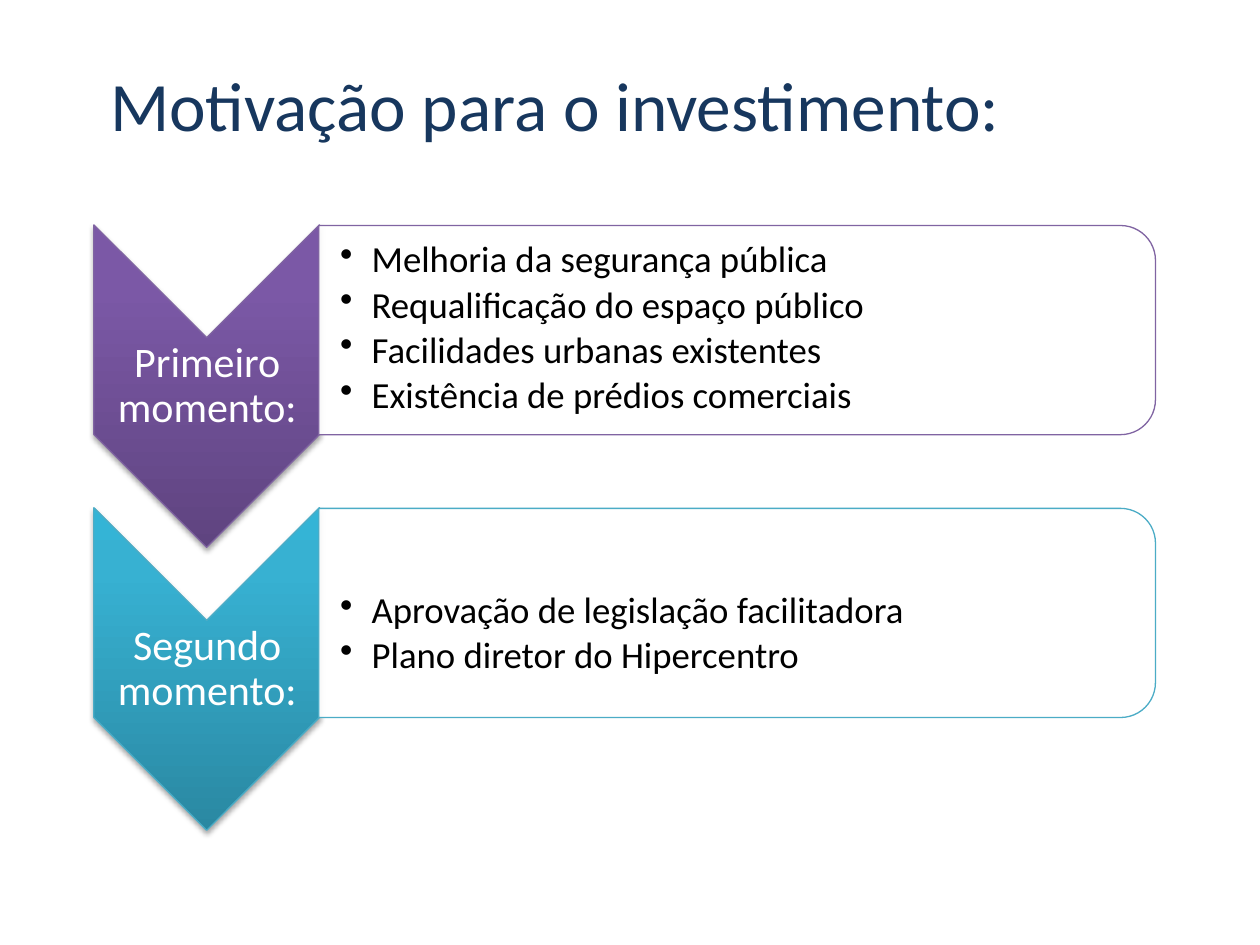
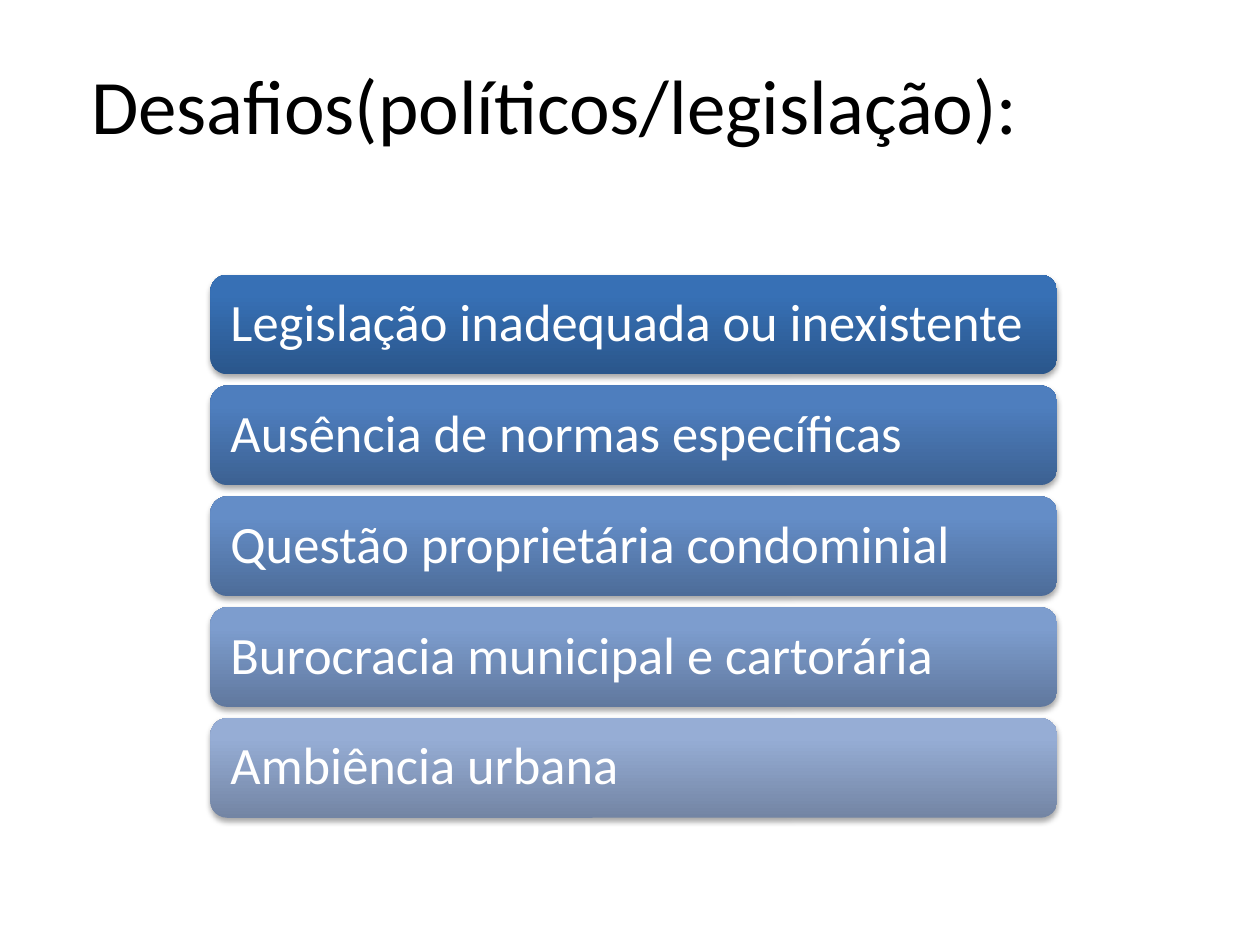
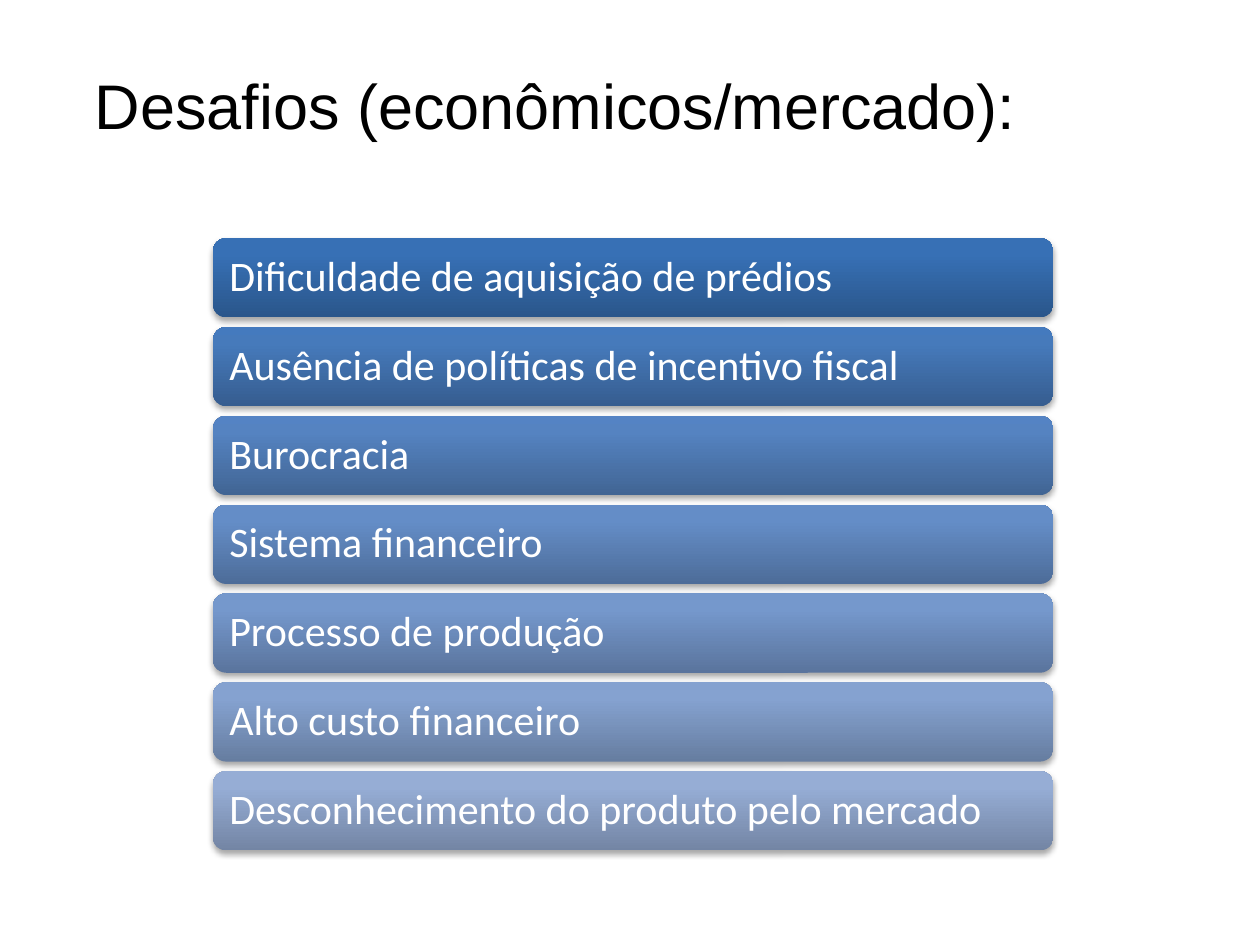
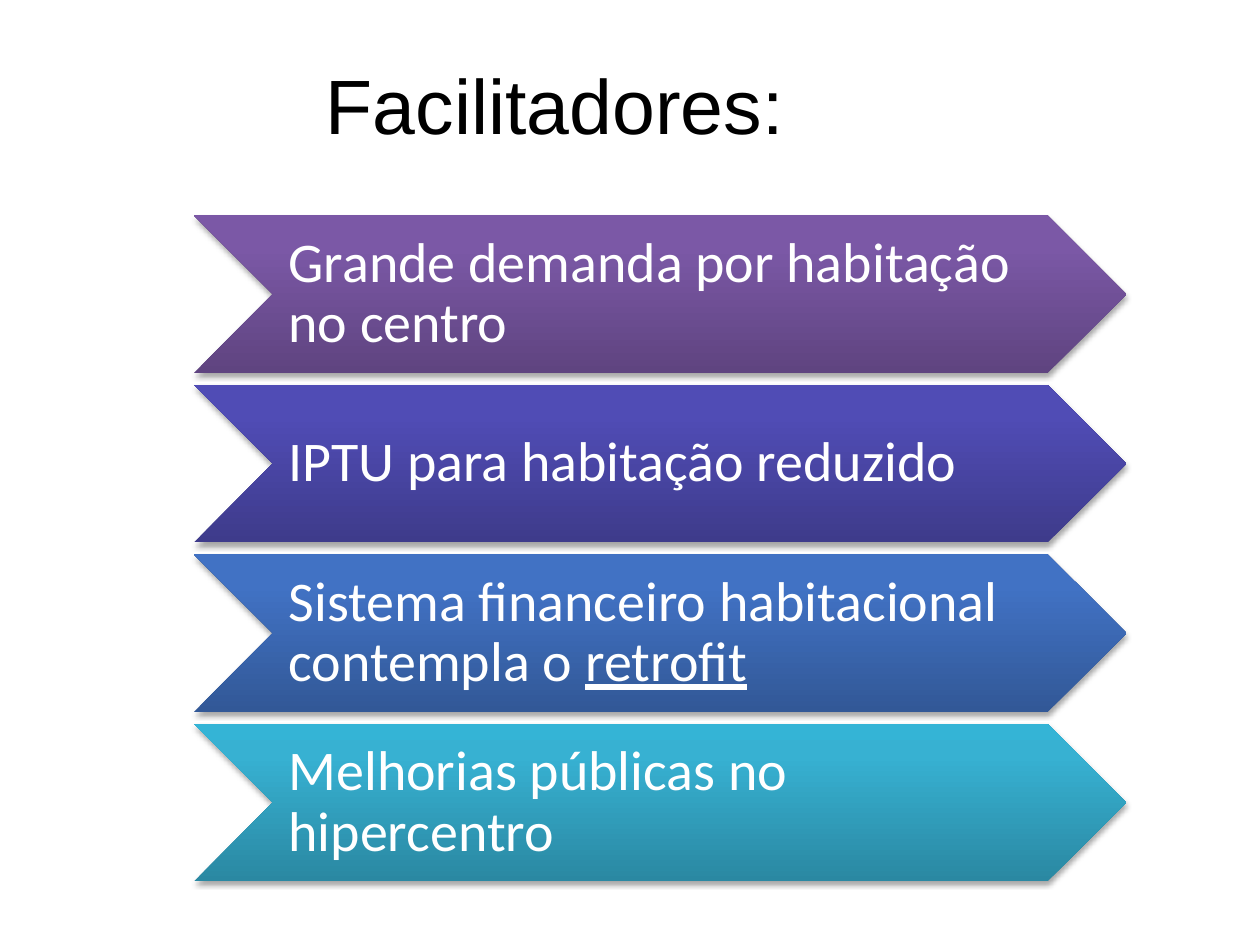
import pptx
import pptx.util
import pptx.oxml
import pptx.dml.color
import pptx.enum.shapes
import pptx.enum.text
from dataclasses import dataclass
from lxml import etree

Inches = pptx.util.Inches
Pt = pptx.util.Pt
Form = pptx.enum.shapes.MSO_SHAPE
Align = pptx.enum.text.PP_ALIGN
NS = "http://schemas.openxmlformats.org/drawingml/2006/main"


@dataclass
class Theme:
    font: str = "Calibri"
    plain: str = "Arial"
    black: str = "000000"
    white: str = "FFFFFF"
    navy: str = "17375E"
    edges: tuple = ("8064A2", "4BACC6")
    purple: tuple = ("5F4480", "7B58A6", "7C57A8")
    indigo: tuple = ("3E3B8B", "504CB5", "4F4BB8")
    blue: tuple = ("325897", "4172C4", "3F72C7")
    teal: tuple = ("2A88A2", "37B1D2", "34B4D6")
    ramp: tuple = (
        ("2A568B", "3770B5", "3570B8"),
        ("4D6C99", "648DC7", "638DCA"),
        ("7385A4", "96ADD5", "95ADD7"),
    )
    head: float = 44
    label: float = 24
    item: float = 21
    step: float = 32


def paint(name):
    return pptx.dml.color.RGBColor.from_string(name)


def blend(low, high, part):
    pairs = zip(bytes.fromhex(low), bytes.fromhex(high))
    return "".join(f"{round(a + (b - a) * part):02X}" for a, b in pairs)


def shade(ramp, part):
    spot = part * (len(ramp) - 1)
    base = min(int(spot), len(ramp) - 2)
    return [blend(a, b, spot - base) for a, b in zip(ramp[base], ramp[base + 1])]


class Deck:
    def __init__(self, theme):
        self.theme = theme
        self.file = pptx.Presentation()
        self.file.slide_width = Inches(10)
        self.file.slide_height = Inches(7.5)
        self.slide = None

    def page(self, title, size=None, font=None, color=None):
        self.slide = self.file.slides.add_slide(self.file.slide_layouts[5])
        shape = self.slide.shapes.title
        shape.left, shape.top = Inches(0.5), Inches(0.2)
        shape.width, shape.height = Inches(7.81), Inches(1.25)
        frame = shape.text_frame
        frame.text = title
        frame.auto_size = pptx.enum.text.MSO_AUTO_SIZE.NONE
        frame.vertical_anchor = pptx.enum.text.MSO_ANCHOR.MIDDLE
        line = frame.paragraphs[0]
        line.alignment = Align.CENTER
        self.style(line, size or self.theme.head, color or self.theme.black, font)

    def style(self, line, size, color, font=None):
        for run in line.runs:
            run.font.size = Pt(size)
            run.font.name = font or self.theme.font
            run.font.color.rgb = paint(color)

    def shape(self, form, box, turn=0, edge=None):
        shape = self.slide.shapes.add_shape(form, *map(Inches, box))
        shape.rotation = turn
        shape.shadow.inherit = False
        if edge:
            shape.line.color.rgb = paint(edge)
            shape.line.width = Pt(0.75)
        else:
            shape.line.fill.background()
        return shape

    def panel(self, box, edge):
        shape = self.shape(Form.ROUND_2_SAME_RECTANGLE, box, 90, edge)
        shape.fill.solid()
        shape.fill.fore_color.rgb = paint(self.theme.white)
        tint = shape.fill._xPr.find(f".//{{{NS}}}srgbClr")
        etree.SubElement(tint, f"{{{NS}}}alpha", val="90000")

    def gloss(self, form, box, tones, turn=0, edge=None):
        shape = self.shape(form, box, turn, edge)
        stops = "".join(
            f'<a:gs pos="{spot}"><a:srgbClr val="{tone}"/></a:gs>'
            for spot, tone in zip((0, 80000, 100000), tones)
        )
        props = shape._element.spPr
        props.find(f"{{{NS}}}prstGeom").addnext(pptx.oxml.parse_xml(
            f'<a:gradFill xmlns:a="{NS}" rotWithShape="0"><a:gsLst>{stops}</a:gsLst>'
            '<a:lin ang="16200000" scaled="0"/></a:gradFill>'
        ))
        props.find(f"{{{NS}}}effectLst").append(pptx.oxml.parse_xml(
            f'<a:outerShdw xmlns:a="{NS}" blurRad="40000" dist="23000" dir="5400000" '
            f'rotWithShape="0"><a:srgbClr val="{self.theme.black}">'
            '<a:alpha val="35000"/></a:srgbClr></a:outerShdw>'
        ))

    def text(self, box, lines, size, pad, color=None, align=Align.LEFT, tail=None):
        frame = self.slide.shapes.add_textbox(*map(Inches, box)).text_frame
        frame.word_wrap = True
        frame.vertical_anchor = pptx.enum.text.MSO_ANCHOR.MIDDLE
        (frame.margin_left, frame.margin_top,
         frame.margin_right, frame.margin_bottom) = map(Inches, pad)
        frame.text = "\n".join(lines)
        if tail:
            run = frame.paragraphs[-1].add_run()
            run.text = tail
            run.font.underline = True
        for line in frame.paragraphs:
            line.alignment = align
            line.line_spacing = 0.9
            self.style(line, size, color or self.theme.white)
        return frame

    def list(self, box, lines, top):
        frame = self.text(box, lines, self.theme.item, (0.16, top, 0.01, 0.01),
                          self.theme.black)
        for line in frame.paragraphs:
            line.space_after = Pt(3.15)
            props = line._p.get_or_add_pPr()
            props.set("marL", str(Inches(0.25)))
            props.set("indent", str(-Inches(0.25)))
            etree.SubElement(props, f"{{{NS}}}buChar", char="•")

    def bars(self, lines, left, top, width, height, pitch, size, pad):
        inset = height * 0.05
        for i, line in enumerate(lines):
            y = top + i * pitch
            tones = shade(self.theme.ramp, i / (len(lines) - 1))
            self.gloss(Form.ROUNDED_RECTANGLE, (left, y, width, height), tones)
            self.text((left + inset, y + inset, width - 2 * inset, height - 2 * inset),
                      [line], size, [pad] * 4)


def main():
    theme = Theme()
    deck = Deck(theme)

    deck.page("Motivação para o investimento:", 39.6, color=theme.navy)
    stages = [
        ("Primeiro momento:", theme.purple, 0.01, [
            "Melhoria da segurança pública",
            "Requalificação do espaço público",
            "Facilidades urbanas existentes",
            "Existência de prédios comerciais",
        ]),
        ("Segundo momento:", theme.teal, 0.37, [
            "Aprovação de legislação facilitadora",
            "Plano diretor do Hipercentro",
        ]),
    ]
    for i, (name, tones, top, items) in enumerate(stages):
        y = i * 2.245
        edge = theme.edges[i]
        deck.gloss(Form.CHEVRON, (0.36, 2.17 + y, 2.56, 1.79), tones, 90, edge)
        deck.text((0.75, 2.68 + y, 1.79, 0.77), [name], theme.label, [0.02] * 4,
                  align=Align.CENTER)
        deck.panel((5.02, y - 0.7, 1.66, 6.64), edge)
        deck.list((2.54, 1.86 + y, 6.56, 1.5), items, top)

    deck.page("Desafios(políticos/legislação):")
    deck.bars([
        "Legislação inadequada ou inexistente",
        "Ausência de normas específicas",
        "Questão proprietária condominial",
        "Burocracia municipal e cartorária",
        "Ambiência urbana",
    ], 1.67, 2.18, 6.72, 0.79, 0.88, 30, 0.12)

    deck.page("Desafios (econômicos/mercado):", 36, theme.plain)
    deck.bars([
        "Dificuldade de aquisição de prédios",
        "Ausência de políticas de incentivo fiscal",
        "Burocracia",
        "Sistema financeiro",
        "Processo de produção",
        "Alto custo financeiro",
        "Desconhecimento do produto pelo mercado",
    ], 1.69, 1.89, 6.67, 0.63, 0.705, 24, 0.1)

    deck.page("Facilitadores:", font=theme.plain)
    steps = [
        ("Grande demanda por habitação no centro", theme.purple, None),
        ("IPTU para habitação reduzido", theme.indigo, None),
        ("Sistema financeiro habitacional contempla o ", theme.blue, "retrofit"),
        ("Melhorias públicas no hipercentro", theme.teal, None),
    ]
    for i, (line, tones, tail) in enumerate(steps):
        y = 1.71 + i * 1.345
        deck.gloss(Form.CHEVRON, (1.54, y, 7.4, 1.25), tones)
        deck.text((2.16, y, 6.15, 1.25), [line], theme.step, [0.13] * 4, tail=tail)

    deck.file.save("out.pptx")


if __name__ == "__main__":
    main()
